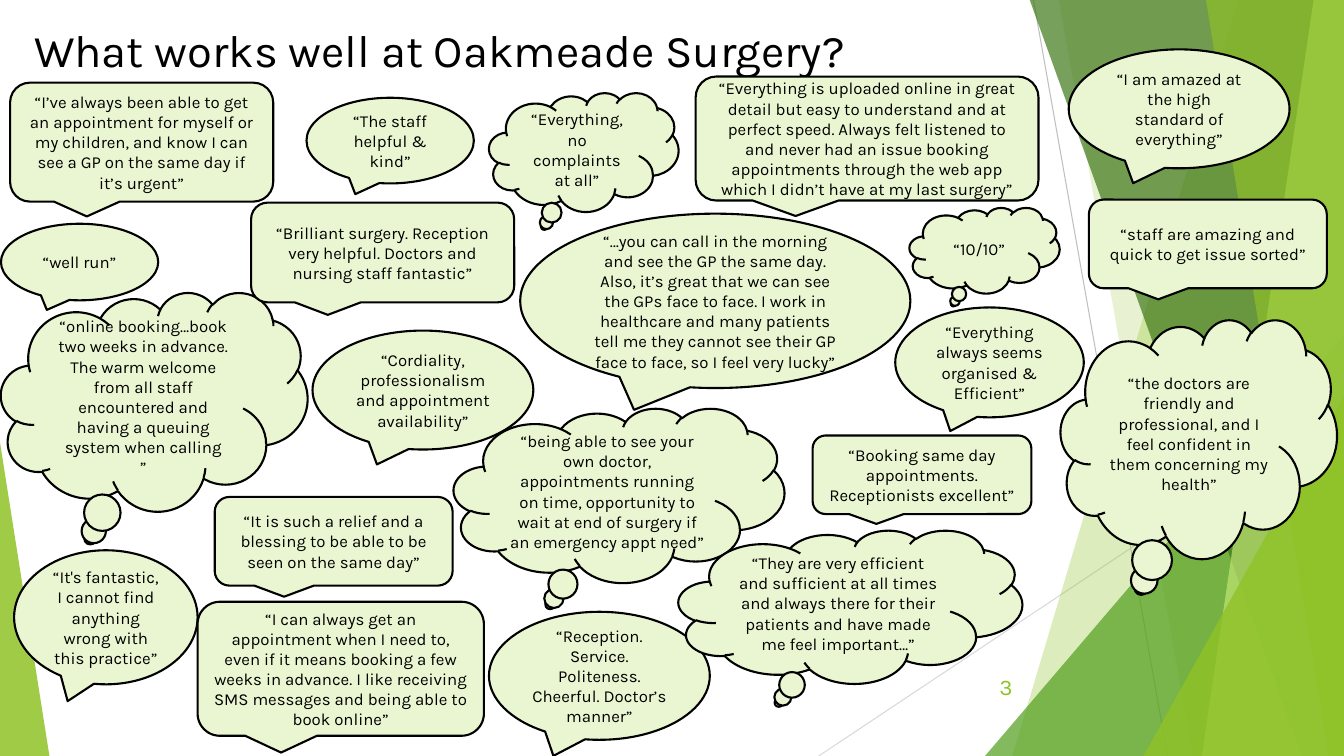
"""Build a slide of patient quotes in speech and thought bubbles."""
from lxml import etree
from pptx import Presentation
from pptx.dml.color import RGBColor
from pptx.enum.shapes import MSO_CONNECTOR, MSO_SHAPE
from pptx.enum.text import MSO_ANCHOR, PP_ALIGN
from pptx.oxml.ns import qn
from pptx.util import Inches, Pt

BOX = MSO_SHAPE.ROUNDED_RECTANGULAR_CALLOUT
OVAL = MSO_SHAPE.OVAL_CALLOUT
CLOUD = MSO_SHAPE.CLOUD_CALLOUT
TRIANGLE = MSO_SHAPE.ISOSCELES_TRIANGLE
STRAIGHT = MSO_CONNECTOR.STRAIGHT
LEFT, CENTER, RIGHT = PP_ALIGN.LEFT, PP_ALIGN.CENTER, PP_ALIGN.RIGHT
MIDDLE = MSO_ANCHOR.MIDDLE

WIDTH, HEIGHT = 13.33, 7.5
PANEL_TOP = -0.01
FONT = "Karla"
BLACK, GREEN, BUBBLE_FILL = "000000", "90C226", "EAF6D1"

RAYS = [
    ((10.25, 0), (11.58, HEIGHT), "BFBFBF"),
    ((WIDTH, 4.03), (8.12, HEIGHT), "D9D9D9"),
]
BACK_PANELS = [(12.28, 10.04, GREEN, 30), (10.5, 11.83, GREEN, 20)]
BACK_TRIANGLES = [(9.77, 3.33, 3.56, 1, "54A021", 72)]
FRONT_PANELS = [
    (10.21, 12.91, "3F7819", 70),
    (13.03, 11.92, "C0E474", 70),
    (11.96, 13.18, GREEN, 65),
]
FRONT_TRIANGLES = [
    (11.34, 3.93, 1.99, 1, GREEN, 80),
    (0, 4.39, 0.49, 0, GREEN, 85),
]
LABELS = [
    ("What works well at Oakmeade Surgery?", (0.24, 0.16, 9.4, 0.67), 32.4, BLACK, LEFT),
    ("3", (9.39, 6.61, 0.75, 0.4), 16, GREEN, RIGHT),
]
QUOTES = [
    (BOX, (0.1, 0.82, 2.61, 1.18),
     "“I’ve always been able to get an appointment for myself or my children, "
     "and know I can see a GP on the same day if it’s urgent”"),
    (CLOUD, (0.01, 2.9, 3.04, 2.17),
     "“online booking…book two weeks in advance. The warm welcome from all staff "
     "encountered and having a queuing system when calling\n”"),
    (OVAL, (3.04, 0.97, 1.66, 0.85), "“The staff helpful & kind”"),
    (BOX, (2.49, 2.01, 2.61, 0.99),
     "“Brilliant surgery. Reception very helpful. Doctors and nursing staff fantastic”"),
    (CLOUD, (4.85, 0.92, 1.88, 1.18), "“Everything, no complaints at all”"),
    (OVAL, (0.14, 5.46, 1.82, 1.33),
     "“It's fantastic, I cannot find anything wrong with this practice”"),
    (BOX, (6.9, 0.76, 3.4, 1.23),
     "“Everything is uploaded online in great detail but easy to understand and at "
     "perfect speed. Always felt listened to and never had an issue booking "
     "appointments through the web app which I didn’t have at my last surgery”"),
    (OVAL, (5.16, 2.12, 3.87, 1.73),
     "“…you can call in the morning and see the GP the same day. Also, it’s great "
     "that we can see the GPs face to face. I work in healthcare and many patients "
     "tell me they cannot see their GP face to face, so I feel very lucky”"),
    (CLOUD, (4.5, 4.05, 3.28, 1.73),
     "“being able to see your own doctor, appointments running on time, opportunity "
     "to wait at end of surgery if an emergency appt need”"),
    (OVAL, (3.1, 3.28, 2.19, 1.18),
     "“Cordiality, professionalism and appointment availability”"),
    (BOX, (1.96, 5.97, 2.84, 1.33),
     "“I can always get an appointment when I need to, even if it means booking a few "
     "weeks in advance. I like receiving SMS messages and being able to book online”"),
    (OVAL, (8.88, 3.05, 1.87, 1.09), "“Everything always seems organised & Efficient”"),
    (BOX, (2.13, 4.93, 2.36, 0.88),
     "“It is such a relief and a blessing to be able to be seen on the same day”"),
    (CLOUD, (9.02, 2.06, 1.49, 0.85), "“10/10”"),
    (OVAL, (0.01, 2.22, 1.56, 0.76), "“well run”"),
    (BOX, (8.06, 4.32, 2.17, 0.78),
     "“Booking same day appointments. Receptionists excellent”"),
    (OVAL, (4.85, 6.07, 2.19, 1.27),
     "“Reception. Service. Politeness. Cheerful. Doctor’s manner”"),
    (CLOUD, (6.73, 5.26, 3.41, 1.52),
     "“They are very efficient and sufficient at all times and always there for their "
     "patients and have made me feel important…”"),
    (OVAL, (10.6, 0.49, 2.19, 1.18), "“I am amazed at the high standard of everything”"),
    (BOX, (10.8, 1.98, 2.36, 0.88), "“staff are amazing and quick to get issue sorted”"),
    (CLOUD, (10.52, 3.17, 2.74, 2.37),
     "“the doctors are friendly and professional, and I feel confident in them "
     "concerning my health”"),
]


def color(hex_string):
    return RGBColor.from_string(hex_string)


def paint(shape, fill, opacity=100):
    shape.shadow.inherit = False
    shape.fill.solid()
    shape.fill.fore_color.rgb = color(fill)
    if opacity < 100:
        tint = shape.fill._xPr.find(qn("a:solidFill"))[0]
        etree.SubElement(tint, qn("a:alpha")).set("val", str(opacity * 1000))


def write(shape, text, size, font_color, alignment):
    frame = shape.text_frame
    frame.text = text
    frame.word_wrap = True
    frame.vertical_anchor = MIDDLE
    font_format = {"name": FONT, "size": Pt(size)}
    for paragraph in frame.paragraphs:
        paragraph.alignment = alignment
        for run in paragraph.runs:
            for attribute, value in font_format.items():
                setattr(run.font, attribute, value)
            run.font.color.rgb = color(font_color)


def add_rays(slide):
    for start, end, line_color in RAYS:
        ray = slide.shapes.add_connector(STRAIGHT, *map(Inches, start + end))
        ray.line.color.rgb = color(line_color)
        ray.line.width = Pt(0.75)
        etree.SubElement(ray._element.spPr, qn("a:effectLst"))


def add_panels(slide, panels):
    for top_left, bottom_left, fill, opacity in panels:
        builder = slide.shapes.build_freeform(
            Inches(top_left), Inches(PANEL_TOP))
        corners = [(WIDTH, PANEL_TOP), (WIDTH, HEIGHT), (bottom_left, HEIGHT)]
        builder.add_line_segments([(Inches(x), Inches(y)) for x, y in corners])
        panel = builder.convert_to_shape()
        paint(panel, fill, opacity)
        panel.line.fill.background()


def add_triangles(slide, triangles):
    for left, top, width, apex, fill, opacity in triangles:
        area = (left, top, width, HEIGHT - top)
        triangle = slide.shapes.add_shape(TRIANGLE, *map(Inches, area))
        triangle.adjustments[0] = apex
        paint(triangle, fill, opacity)
        triangle.line.fill.background()


def add_labels(slide):
    for text, area, size, font_color, alignment in LABELS:
        label = slide.shapes.add_textbox(*map(Inches, area))
        write(label, text, size, font_color, alignment)


def add_quotes(slide):
    for kind, area, text in QUOTES:
        bubble = slide.shapes.add_shape(kind, *map(Inches, area))
        paint(bubble, BUBBLE_FILL)
        bubble.line.color.rgb = color(BLACK)
        bubble.line.width = Pt(1.5)
        write(bubble, text, 12, BLACK, CENTER)


def main():
    presentation = Presentation()
    presentation.slide_width = Inches(WIDTH)
    presentation.slide_height = Inches(HEIGHT)
    slide = presentation.slides.add_slide(presentation.slide_layouts[6])
    add_rays(slide)
    add_panels(slide, BACK_PANELS)
    add_triangles(slide, BACK_TRIANGLES)
    add_panels(slide, FRONT_PANELS)
    add_triangles(slide, FRONT_TRIANGLES)
    add_labels(slide)
    add_quotes(slide)
    presentation.save("out.pptx")


if __name__ == "__main__":
    main()
